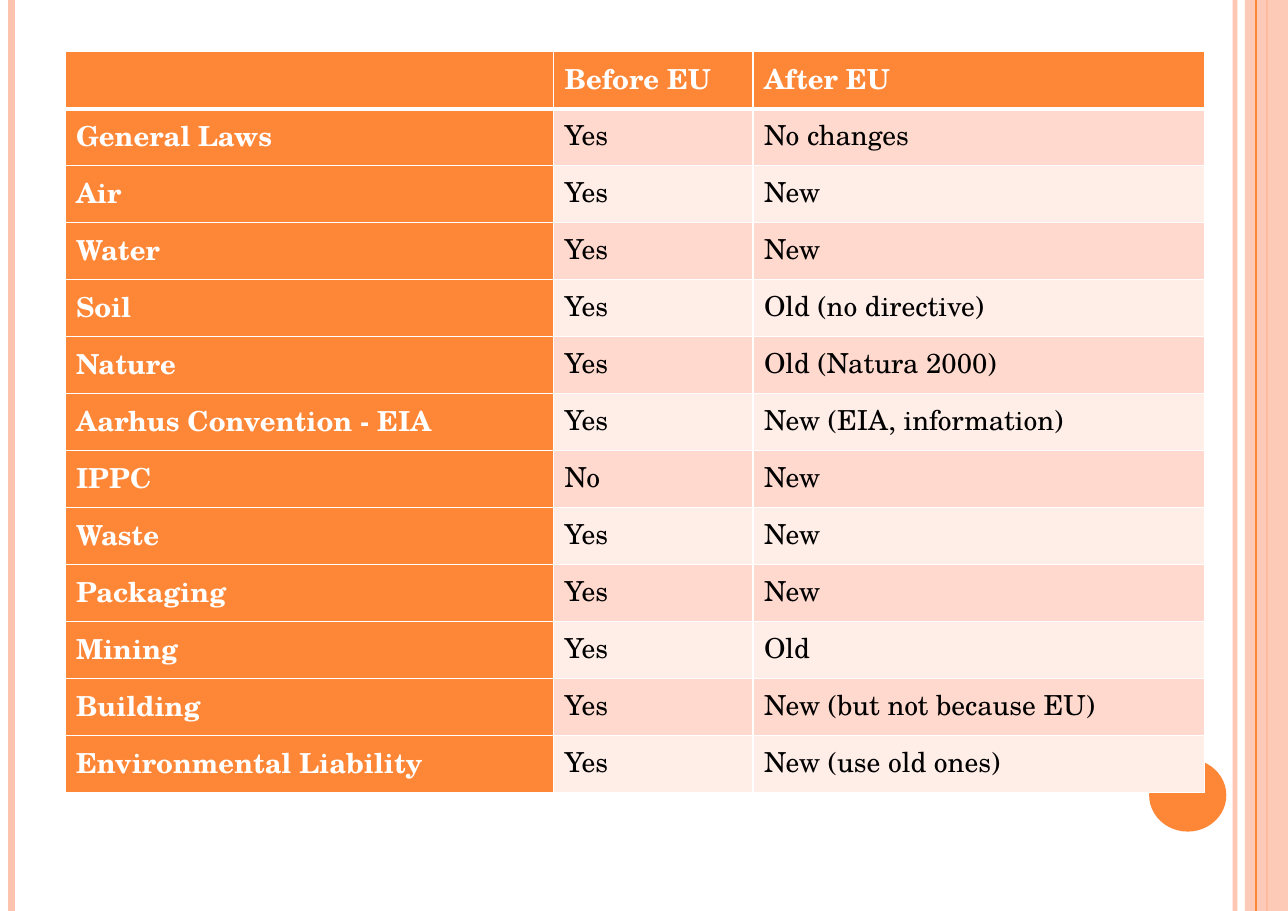
from dataclasses import dataclass

from lxml.etree import SubElement
from pptx import Presentation
from pptx.dml.color import RGBColor
from pptx.enum.shapes import MSO_CONNECTOR, MSO_SHAPE
from pptx.oxml.ns import qn
from pptx.util import Inches, Pt


@dataclass(frozen=True)
class Theme:
    accent: str = "FE8637"
    blush: str = "FEC3AE"
    bands: tuple = ("FFD9CE", "FFEDE8")
    light: str = "FFFFFF"
    dark: str = "000000"
    font: str = "TeX Gyre Schola"
    text_size: float = 18
    border: float = 1
    header_border: float = 3


class Page:
    def __init__(self, deck, theme):
        self.deck = deck
        self.theme = theme
        self.slide = deck.slides.add_slide(deck.slide_layouts[6])

    def across(self, percent):
        return round(self.deck.slide_width * percent / 100)

    def down(self, percent):
        return round(self.deck.slide_height * percent / 100)

    def set_alpha(self, element, opacity):
        color = next(element.iter(qn("a:srgbClr")))
        SubElement(color, qn("a:alpha"), val=str(opacity * 1000))

    def rule(self, left, color, width, opacity=100):
        x = self.across(left)
        line = self.slide.shapes.add_connector(
            MSO_CONNECTOR.STRAIGHT, x, 0, x, self.down(100))
        line.line.color.rgb = RGBColor.from_string(color)
        line.line.width = Pt(width)
        properties = line._element.spPr
        self.set_alpha(properties, opacity)
        SubElement(properties, qn("a:effectLst"))

    def shape(self, kind, left, top, width, height, color, opacity=100):
        shape = self.slide.shapes.add_shape(
            kind, self.across(left), self.down(top),
            self.across(width), self.down(height))
        shape.shadow.inherit = False
        shape.fill.solid()
        shape.fill.fore_color.rgb = RGBColor.from_string(color)
        shape.line.fill.background()
        self.set_alpha(shape._element.spPr, opacity)

    def border(self, cell, side, width):
        properties = cell._tc.get_or_add_tcPr()
        edge = SubElement(properties, qn(f"a:{side}"), w=str(Pt(width)))
        fill = SubElement(edge, qn("a:solidFill"))
        SubElement(fill, qn("a:srgbClr"), val=self.theme.light)

    def cell(self, cell, text, fill, color, bold, widths):
        for side, width in widths.items():
            self.border(cell, side, width)
        cell.fill.solid()
        cell.fill.fore_color.rgb = RGBColor.from_string(fill)
        para = cell.text_frame.paragraphs[0]
        formats = {"name": self.theme.font, "size": Pt(self.theme.text_size), "bold": bold}
        for name, value in formats.items():
            setattr(para.font, name, value)
        if text:
            span = para.add_run()
            span.text = text
            for name, value in formats.items():
                setattr(span.font, name, value)
            span.font.color.rgb = RGBColor.from_string(color)

    def table(self, left, top, columns, height, rows):
        theme = self.theme
        table = self.slide.shapes.add_table(
            len(rows), len(columns), self.across(left), self.down(top),
            self.across(sum(columns)), self.down(height)).table
        for name in ("first_row", "horz_banding"):
            setattr(table, name, False)
        for column, width in zip(table.columns, columns):
            column.width = self.across(width)
        for row in table.rows:
            row.height = self.down(height / len(rows))
        for r, row in enumerate(rows):
            widths = dict.fromkeys(("lnL", "lnR", "lnT", "lnB"), theme.border)
            if r == 0:
                widths["lnB"] = theme.header_border
            elif r == 1:
                widths["lnT"] = theme.header_border
            for c, text in enumerate(row):
                heading = r == 0 or c == 0
                fill = theme.accent if heading else theme.bands[(r - 1) % 2]
                color = theme.light if heading else theme.dark
                self.cell(table.cell(r, c), text, fill, color, heading, widths)


LAWS = [
    ("", "Before EU", "After EU"),
    ("General Laws", "Yes", "No changes"),
    ("Air", "Yes", "New"),
    ("Water", "Yes", "New"),
    ("Soil", "Yes", "Old (no directive)"),
    ("Nature", "Yes", "Old (Natura 2000)"),
    ("Aarhus Convention - EIA", "Yes", "New (EIA, information)"),
    ("IPPC", "No", "New"),
    ("Waste", "Yes", "New"),
    ("Packaging", "Yes", "New"),
    ("Mining", "Yes", "Old"),
    ("Building", "Yes", "New (but not because EU)"),
    ("Environmental Liability", "Yes", "New (use old ones)"),
]


def main():
    deck = Presentation()
    deck.slide_width, deck.slide_height = Inches(11.69), Inches(8.27)
    theme = Theme()
    page = Page(deck, theme)
    page.rule(95.89, theme.blush, 3, 93)
    page.rule(0.86, theme.blush, 4.5)
    page.rule(98.37, theme.accent, 1.5)
    page.shape(MSO_SHAPE.RECTANGLE, 96.66, 0, 3.34, 100, theme.blush, 87)
    page.rule(97.52, theme.accent, 0.75)
    page.shape(MSO_SHAPE.OVAL, 89.22, 83.31, 5.99, 7.98, theme.accent)
    page.table(5.05, 5.68, (37.94, 15.48, 35.07), 81.38, LAWS)
    deck.save("out.pptx")


if __name__ == "__main__":
    main()
